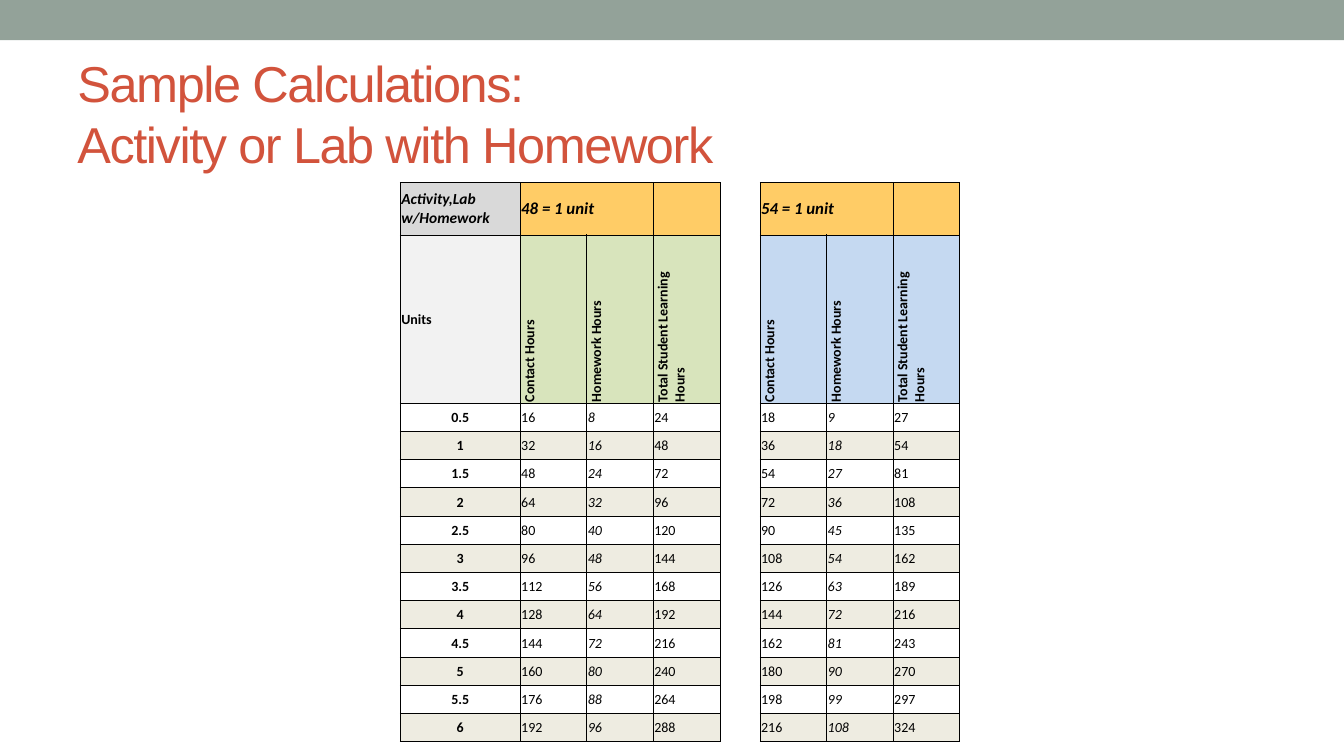
from lxml.etree import SubElement
from pptx import Presentation
from pptx.dml.color import RGBColor
from pptx.enum.shapes import MSO_SHAPE
from pptx.enum.text import MSO_ANCHOR, MSO_AUTO_SIZE, PP_ALIGN
from pptx.oxml.ns import qn
from pptx.util import Inches, Pt

WIDTH, HEIGHT = 13.33, 7.5
COLUMNS = [1.19] + [0.66] * 3 + [0.4] + [0.66] * 3
ROWS = [0.52, 1.53] + [0.28] * 12
GAP = 4
HEADINGS = ["Contact Hours", "Homework Hours", "Total Student Learning Hours"]
GROUPS = [(1, 48, "D8E4BC"), (5, 54, "C5D9F1")]
BASE = {"name": "Calibri", "size": Pt(10), "bold": False, "italic": False}


def color(value):
    """Turn a hex string into a colour."""
    return RGBColor.from_string(value)


def apply(target, values):
    """Set every attribute in a dict on the target."""
    for name, value in values.items():
        setattr(target, name, value)


def paint(shape, value):
    """Fill with a colour, or leave clear when there is none."""
    if value:
        shape.fill.solid()
        shape.fill.fore_color.rgb = color(value)
    else:
        shape.fill.background()


def add_bar(page):
    """Draw the band across the top."""
    bar = page.shapes.add_shape(MSO_SHAPE.RECTANGLE, 0, 0, Inches(WIDTH), Inches(0.4))
    bar.shadow.inherit = False
    bar.line.fill.background()
    paint(bar, "93A299")


def add_title(page, text):
    """Place and format the title."""
    title = page.shapes.title
    apply(title, {"left": Inches(WIDTH * 0.05), "top": Inches(0.58),
                  "width": Inches(WIDTH * 0.9), "height": Inches(1.08)})
    title.text = text
    apply(title.text_frame, {"vertical_anchor": MSO_ANCHOR.MIDDLE, "word_wrap": True,
                             "auto_size": MSO_AUTO_SIZE.NONE})
    para = title.text_frame.paragraphs[0]
    para.alignment = PP_ALIGN.LEFT
    for span in para.runs:
        apply(span.font, {"name": "Arial", "size": Pt(36)})
        span.font.color.rgb = color("D2533C")
        span.font._element.set("spc", "-100")


def add_borders(cell, sides):
    """Give a cell thin black borders on the named sides."""
    properties = cell._tc.get_or_add_tcPr()
    for side in "LRTB":
        line = SubElement(properties, qn(f"a:ln{side}"), w=str(Pt(0.5)))
        if side in sides:
            fill = SubElement(line, qn("a:solidFill"))
            SubElement(fill, qn("a:srgbClr"), val="000000")
        else:
            SubElement(line, qn("a:noFill"))


def set_cell(cell, text="", fill=None, align=PP_ALIGN.JUSTIFY, sides="LRTB", **changes):
    """Write and format one cell."""
    apply(cell, {"margin_left": Inches(0.01), "margin_right": Inches(0.01),
                 "margin_top": Inches(0.01), "margin_bottom": 0,
                 "vertical_anchor": MSO_ANCHOR.MIDDLE})
    add_borders(cell, sides)
    paint(cell, fill)
    para = cell.text_frame.paragraphs[0]
    para.alignment = align
    if text:
        span = para.add_run()
        span.text = text
        apply(span.font, {**BASE, **changes})
        span.font.color.rgb = color("000000")
    else:
        SubElement(para._p, qn("a:endParaRPr"), sz="1000")


def fill_units(table):
    """Fill the units column and the empty gap column."""
    set_cell(table.cell(0, 0), "Activity,Lab w/Homework", "D9D9D9",
             size=Pt(11), bold=True, italic=True)
    set_cell(table.cell(1, 0), "Units", "F2F2F2", bold=True)
    for row in range(2, len(ROWS)):
        set_cell(table.cell(row, 0), f"{(row - 1) / 2:g}", band(row),
                 PP_ALIGN.CENTER, bold=True)
    for row in range(len(ROWS)):
        set_cell(table.cell(row, GAP), sides="LR")


def band(row):
    """Return the fill of every second body row."""
    return "EEECE1" if row % 2 else None


def fill_group(table, first, hours, tint):
    """Fill the three columns for one definition of a unit."""
    set_cell(table.cell(0, first), f"{hours} = 1 unit", "FFCC66",
             size=Pt(12), bold=True, italic=True)
    for column in (first + 1, first + 2):
        set_cell(table.cell(0, column), fill="FFCC66")
    table.cell(0, first).merge(table.cell(0, first + 1))
    shares = [hours * 2 // 3, hours // 3, hours]
    for offset, (heading, share) in enumerate(zip(HEADINGS, shares)):
        column = first + offset
        header = table.cell(1, column)
        set_cell(header, heading, tint, PP_ALIGN.LEFT, bold=True)
        header._tc.get_or_add_tcPr().set("vert", "vert270")
        for row in range(2, len(ROWS)):
            set_cell(table.cell(row, column), f"{share * (row - 1) / 2:g}", band(row),
                     italic=offset == 1)


def add_hours_table(page):
    """Build the table of hours for each number of units."""
    frame = page.shapes.add_table(len(ROWS), len(COLUMNS), Inches(3.97), Inches(1.81),
                                  Inches(sum(COLUMNS)), Inches(sum(ROWS)))
    table = frame.table
    apply(table, {"first_row": False, "horz_banding": False})
    for column, width in zip(table.columns, COLUMNS):
        column.width = Inches(width)
    for row, height in zip(table.rows, ROWS):
        row.height = Inches(height)
    fill_units(table)
    for group in GROUPS:
        fill_group(table, *group)


def main():
    """Build the slide and save it."""
    deck = Presentation()
    apply(deck, {"slide_width": Inches(WIDTH), "slide_height": Inches(HEIGHT)})
    page = deck.slides.add_slide(deck.slide_layouts.get_by_name("Title Only"))
    add_bar(page)
    add_title(page, "Sample Calculations:\vActivity or Lab with Homework")
    add_hours_table(page)
    deck.save("out.pptx")


if __name__ == "__main__":
    main()
